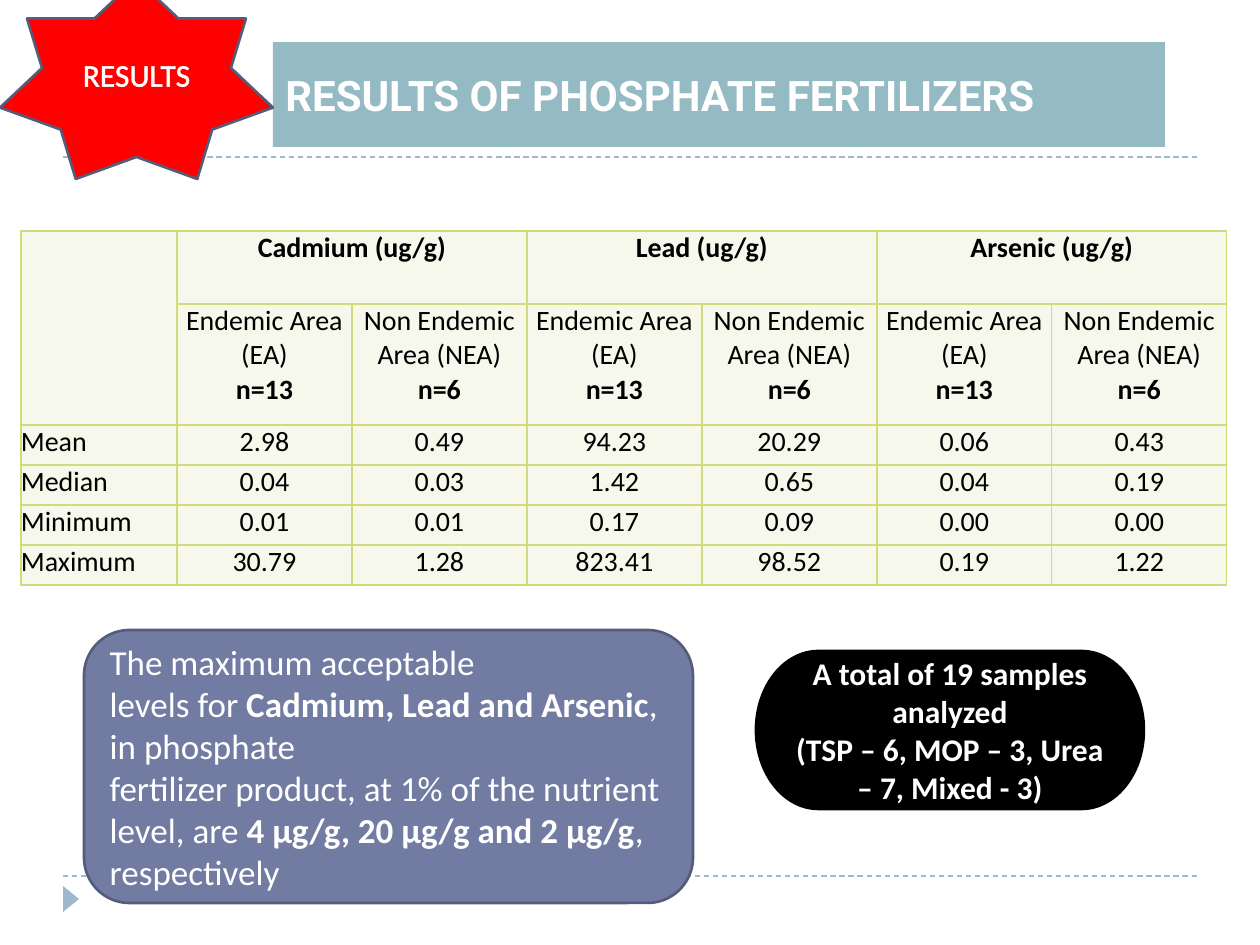
from dataclasses import dataclass

from lxml import etree
from pptx import Presentation
from pptx import util as u
from pptx.dml.color import RGBColor
from pptx.enum import dml, shapes, text
from pptx.oxml import ns

PX = 914400 / 126
KIND = shapes.MSO_SHAPE
LEFT, MID = text.PP_ALIGN.LEFT, text.PP_ALIGN.CENTER
WHITE, BLACK, PALE, LIME = "FFFFFF", "000000", "F7F8EC", "D2DA7A"
SKY, SLATE = "9FB8CD", "545C79"


@dataclass
class Run:
    """A stretch of text in one weight."""
    text: str
    bold: bool = False


@dataclass
class Box:
    """A filled shape with its place in px and its text."""
    kind: int
    place: tuple[int, int, int, int]
    fill: str
    line: str = ""
    paras: tuple[tuple[Run, ...], ...] = ()
    size: int = 18
    align: int = MID
    font: str = "Calibri"
    turn: int = 0


def px(num: float) -> int:
    """Turn px into EMU."""
    return round(num * PX)


def hue(code: str) -> RGBColor:
    """Turn a hex string into a colour."""
    return RGBColor.from_string(code)


def write(frame, paras, size: int, color: str, align: int, font: str = "Calibri") -> None:
    """Fill a text frame run by run."""
    for num, runs in enumerate(paras):
        para = frame.add_paragraph() if num else frame.paragraphs[0]
        para.alignment = align
        for part in runs:
            run = para.add_run()
            run.text = part.text
            run.font.name, run.font.size = font, u.Pt(size)
            run.font.bold = part.bold
            run.font.color.rgb = hue(color)


def draw_box(slide, box: Box):
    """Draw one filled shape."""
    shape = slide.shapes.add_shape(box.kind, *map(px, box.place))
    shape.shadow.inherit = False
    shape.rotation = box.turn
    shape.fill.solid()
    shape.fill.fore_color.rgb = hue(box.fill)
    if box.line:
        shape.line.color.rgb = hue(box.line)
        shape.line.width = u.Pt(1.5)
    else:
        shape.line.fill.background()
    shape.text_frame.word_wrap = True
    shape.text_frame.vertical_anchor = text.MSO_ANCHOR.MIDDLE
    write(shape.text_frame, box.paras, box.size, WHITE, box.align, box.font)
    return shape


def draw_rule(slide, top: int) -> None:
    """Draw a dashed line across the slide."""
    rule = slide.shapes.add_connector(
        shapes.MSO_CONNECTOR.STRAIGHT, px(63), px(top), px(1197), px(top))
    rule.line.color.rgb = hue(SKY)
    rule.line.width = u.Pt(0.75)
    rule.line.dash_style = dml.MSO_LINE.DASH
    etree.SubElement(rule._element.spPr, ns.qn("a:effectLst"))


def add_line(root, tag: str, width: int, color: str, spot: int) -> None:
    """Insert a solid line element."""
    line = etree.Element(ns.qn(tag), w=str(width))
    fill = etree.SubElement(line, ns.qn("a:solidFill"))
    etree.SubElement(fill, ns.qn("a:srgbClr"), val=color)
    root.insert(spot, line)


def style_cell(cell) -> None:
    """Give a cell its fill, borders and zero margins."""
    cell.margin_left = cell.margin_right = cell.margin_top = cell.margin_bottom = 0
    for spot, side in enumerate("LRTB"):
        add_line(cell._tc.get_or_add_tcPr(), f"a:ln{side}", 12700, LIME, spot)
    cell.fill.solid()
    cell.fill.fore_color.rgb = hue(PALE)


def draw_table(slide) -> None:
    """Draw the table of metal levels."""
    metals = ("Cadmium", "Lead", "Arsenic")
    areas = (("Endemic Area (EA)", "n=13"), ("Non Endemic Area (NEA)", "n=6"))
    stats = (
        ("Mean", "2.98", "0.49", "94.23", "20.29", "0.06", "0.43"),
        ("Median", "0.04", "0.03", "1.42", "0.65", "0.04", "0.19"),
        ("Minimum", "0.01", "0.01", "0.17", "0.09", "0.00", "0.00"),
        ("Maximum", "30.79", "1.28", "823.41", "98.52", "0.19", "1.22"),
    )
    wides, highs = [156] + [175] * 6, [73, 121] + [40] * 4
    table = slide.shapes.add_table(
        len(highs), len(wides), px(21), px(231), px(sum(wides)), px(sum(highs))).table
    table.first_row = table.horz_banding = False
    for col, wide in zip(table.columns, wides):
        col.width = px(wide)
    for row, high in zip(table.rows, highs):
        row.height = px(high)
    for cell in table.iter_cells():
        style_cell(cell)
    table.cell(0, 0).merge(table.cell(1, 0))
    for num, metal in enumerate(metals):
        left = 1 + 2 * num
        head = table.cell(0, left)
        head.merge(table.cell(0, left + 1))
        write(head.text_frame, [[Run(f"{metal} (ug/g)", True)]], 16, BLACK, MID)
        for step, (area, count) in enumerate(areas):
            write(table.cell(1, left + step).text_frame,
                  [[Run(area)], [Run(count, True)]], 16, BLACK, MID)
    for row, stat in enumerate(stats, 2):
        for col, value in enumerate(stat):
            write(table.cell(row, col).text_frame, [[Run(value)]], 16, BLACK,
                  MID if col else LEFT)


MARK = Box(KIND.ISOSCELES_TRIANGLE, (58, 891, 26, 16), SKY, turn=90)
TITLE = Box(KIND.RECTANGLE, (273, 42, 892, 105), "94BAC3",
            paras=((Run("RESULTS OF PHOSPHATE FERTILIZERS", True),),),
            size=24, align=LEFT, font="Roboto")
TOTAL = Box(KIND.FLOWCHART_TERMINATOR, (756, 651, 388, 158), BLACK, BLACK, (
    (Run("A total of 19 samples analyzed", True),),
    (Run("(TSP – 6, MOP – 3, Urea – 7, Mixed - 3)", True),),
))
STAR = Box(KIND.STAR_7_POINT, (0, -21, 273, 200), "FF0000", SLATE, ((Run("RESULTS"),),))
LIMITS = Box(KIND.ROUNDED_RECTANGLE, (84, 630, 609, 273), "727CA3", SLATE, (
    (Run("The maximum acceptable"),),
    (Run("levels for "), Run("Cadmium, Lead and Arsenic", True), Run(", in phosphate")),
    (Run("fertilizer product, at 1% of the nutrient level, are "),
     Run("4 μg/g, 20 μg/g and 2 μg/g", True), Run(", respectively")),
), size=20, align=LEFT)


def main() -> None:
    """Build and save the slide."""
    deck = Presentation()
    deck.slide_width, deck.slide_height = px(1260), px(945)
    slide = deck.slides.add_slide(deck.slide_layouts[6])
    for top in (876, 157):
        draw_rule(slide, top)
    for box in (MARK, TITLE):
        draw_box(slide, box)
    draw_table(slide)
    draw_box(slide, TOTAL)
    star = draw_box(slide, STAR)
    label = star.text_frame.paragraphs[0].runs[0]
    add_line(label.font._element, "a:ln", 18415, WHITE, 0)
    draw_box(slide, LIMITS)
    deck.save("out.pptx")


if __name__ == "__main__":
    main()
